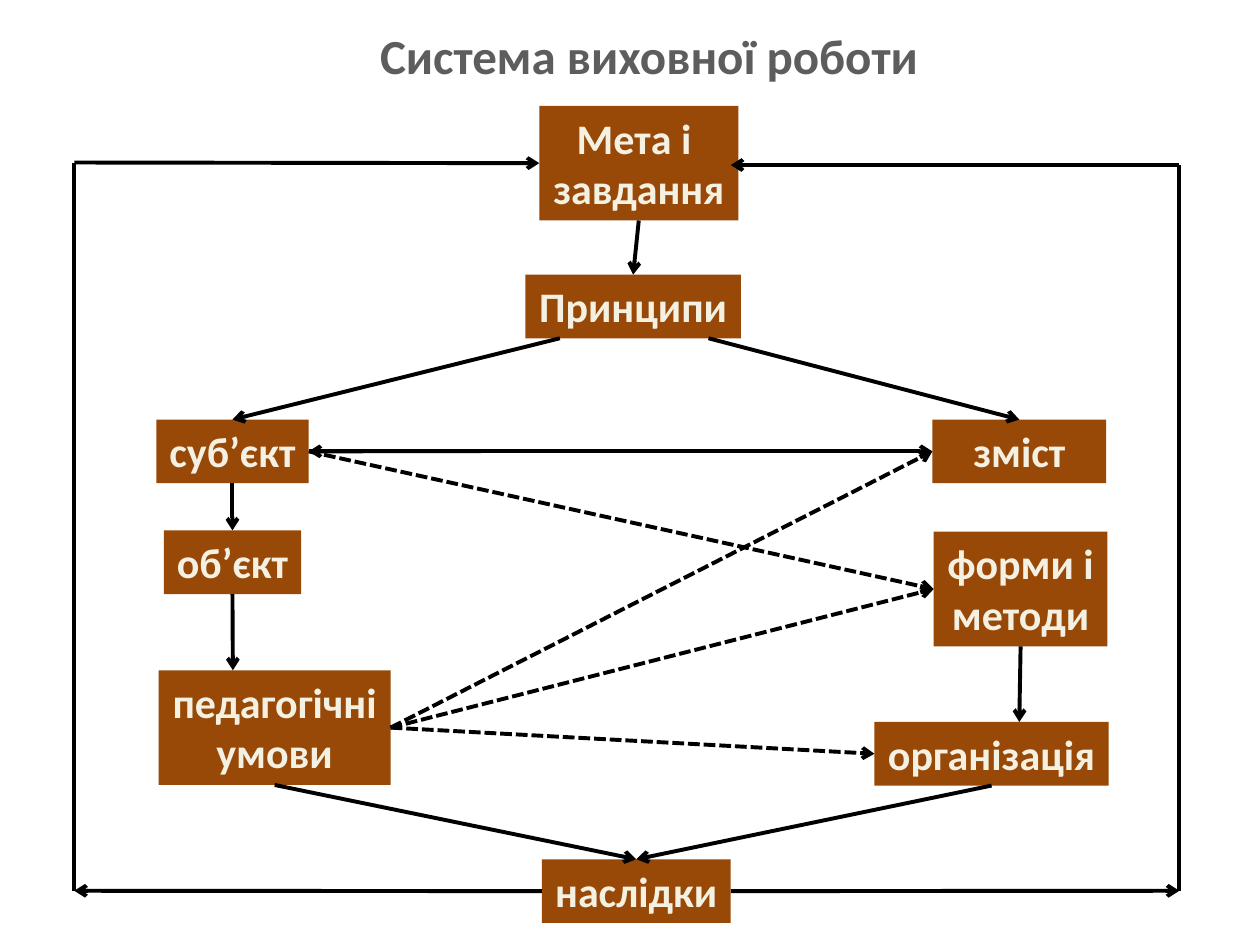
from dataclasses import dataclass

import pptx
import pptx.dml.color
import pptx.enum.dml
import pptx.enum.shapes
import pptx.enum.text
import pptx.oxml
import pptx.oxml.ns
import pptx.util

COLS, ROWS = 100, 75
FONT = "Calibri"
BROWN, CREAM, GREY, BLACK = "984807", "F4F1E3", "5D5D5D", "000000"

Point = tuple[float, float]
TOP, BOTTOM, LEFT, RIGHT = (0.5, 0), (0.5, 1), (0, 0.5), (1, 0.5)


@dataclass(frozen=True)
class Box:
    text: str
    col: float
    row: float
    cols: float
    rows: float = 5.05

    def at(self, share: Point) -> Point:
        return self.col + share[0] * self.cols, self.row + share[1] * self.rows


@dataclass(frozen=True)
class Link:
    start: Point
    end: Point
    dashed: bool = False
    arrow: bool = True


GOAL = Box("Мета і \nзавдання", 42.8, 8.4, 15.8, 9.1)
PRINCIPLES = Box("Принципи", 41.7, 21.8, 17.1)
SUBJECT = Box("суб’єкт", 12.4, 33.3, 12.1)
CONTENT = Box("зміст", 74, 33.3, 13.8)
OBJECT = Box("об’єкт", 13, 42.1, 10.9)
METHODS = Box("форми і\nметоди", 74.1, 42.2, 13.8, 9.1)
CONDITIONS = Box("педагогічні\nумови", 12.6, 53.2, 18.4, 9.1)
ORGANISATION = Box("організація", 69.4, 57.3, 18.6)
RESULTS = Box("наслідки", 43, 68.2, 15)
BOXES = [GOAL, PRINCIPLES, SUBJECT, CONTENT, OBJECT, METHODS,
         CONDITIONS, ORGANISATION, RESULTS]

FRAME_LEFT, FRAME_RIGHT = 5.9, 93.6
LOOP_LEFT, LOOP_RIGHT, LOOP_BOTTOM = 12.9, 13.1, 70.7

LINKS = [
    Link(GOAL.at(BOTTOM), PRINCIPLES.at(TOP)),
    Link(PRINCIPLES.at((0.16, 1)), SUBJECT.at(TOP)),
    Link(PRINCIPLES.at((0.85, 1)), CONTENT.at(TOP)),
    Link(SUBJECT.at(BOTTOM), OBJECT.at(TOP)),
    Link(OBJECT.at(BOTTOM), CONDITIONS.at(TOP[:0] + (0.32, 0))),
    Link(METHODS.at(BOTTOM), (80.9, ORGANISATION.row)),
    Link(CONDITIONS.at(BOTTOM), RESULTS.at(TOP)),
    Link(ORGANISATION.at(BOTTOM), RESULTS.at(TOP)),
    Link(SUBJECT.at(RIGHT), CONTENT.at(LEFT)),
    Link((38.2, 35.8), SUBJECT.at(RIGHT)),
    Link(SUBJECT.at(RIGHT), METHODS.at(LEFT), dashed=True),
    Link(CONDITIONS.at(RIGHT), CONTENT.at(LEFT), dashed=True),
    Link(CONDITIONS.at(RIGHT), METHODS.at(LEFT), dashed=True),
    Link(CONDITIONS.at(RIGHT), ORGANISATION.at(LEFT), dashed=True),
    Link((FRAME_LEFT, LOOP_LEFT), GOAL.at(LEFT)),
    Link((FRAME_RIGHT, LOOP_RIGHT), (58, LOOP_RIGHT)),
    Link(RESULTS.at(LEFT), (FRAME_LEFT, LOOP_BOTTOM)),
    Link(RESULTS.at(RIGHT), (FRAME_RIGHT, LOOP_BOTTOM)),
    Link((FRAME_LEFT, LOOP_LEFT), (FRAME_LEFT, LOOP_BOTTOM), arrow=False),
    Link((FRAME_RIGHT, LOOP_RIGHT), (FRAME_RIGHT, LOOP_BOTTOM), arrow=False),
]

prs = pptx.Presentation()
prs.slide_width = pptx.util.Inches(10)
prs.slide_height = pptx.util.Inches(7.5)


def x(col: float) -> int:
    return round(prs.slide_width * col / COLS)


def y(row: float) -> int:
    return round(prs.slide_height * row / ROWS)


def rgb(value: str) -> pptx.dml.color.RGBColor:
    return pptx.dml.color.RGBColor.from_string(value)


def write(sp, text: str, size: float, color: str) -> None:
    tf = sp.text_frame
    tf.text = text
    tf.word_wrap = False
    tf.auto_size = pptx.enum.text.MSO_AUTO_SIZE.NONE
    tf.vertical_anchor = pptx.enum.text.MSO_ANCHOR.TOP
    for p in tf.paragraphs:
        p.alignment = pptx.enum.text.PP_ALIGN.CENTER
        p.font.name = FONT
        p.font.size = pptx.util.Pt(size)
        p.font.bold = True
        p.font.color.rgb = rgb(color)


def draw_title(s, box: Box) -> None:
    sp = s.shapes.title
    sp.left, sp.top = x(box.col), y(box.row)
    sp.width, sp.height = x(box.cols), y(box.rows)
    write(sp, box.text, 28, GREY)


def draw_box(s, box: Box) -> None:
    sp = s.shapes.add_shape(pptx.enum.shapes.MSO_SHAPE.RECTANGLE,
                            x(box.col), y(box.row), x(box.cols), y(box.rows))
    sp.shadow.inherit = False
    sp.fill.solid()
    sp.fill.fore_color.rgb = rgb(BROWN)
    sp.line.fill.background()
    write(sp, box.text, 24, CREAM)


def draw_link(s, link: Link) -> None:
    (x1, y1), (x2, y2) = link.start, link.end
    sp = s.shapes.add_connector(pptx.enum.shapes.MSO_CONNECTOR.STRAIGHT,
                                x(x1), y(y1), x(x2), y(y2))
    sp.line.color.rgb = rgb(BLACK)
    sp.line.width = pptx.util.Pt(2.25)
    if link.dashed:
        sp.line.dash_style = pptx.enum.dml.MSO_LINE.SQUARE_DOT
    if link.arrow:
        ns = pptx.oxml.ns.nsdecls("a")
        sp.line._get_or_add_ln().append(
            pptx.oxml.parse_xml(f'<a:tailEnd {ns} type="arrow"/>'))
    sp._element.spPr.append(
        pptx.oxml.parse_xml(f'<a:effectLst {pptx.oxml.ns.nsdecls("a")}/>'))


def main() -> None:
    s = prs.slides.add_slide(prs.slide_layouts[5])
    draw_title(s, Box("Система виховної роботи", 28.9, 1.5, 45.2, 5.7))
    for box in BOXES:
        draw_box(s, box)
    for link in LINKS:
        draw_link(s, link)
    prs.save("out.pptx")


if __name__ == "__main__":
    main()
